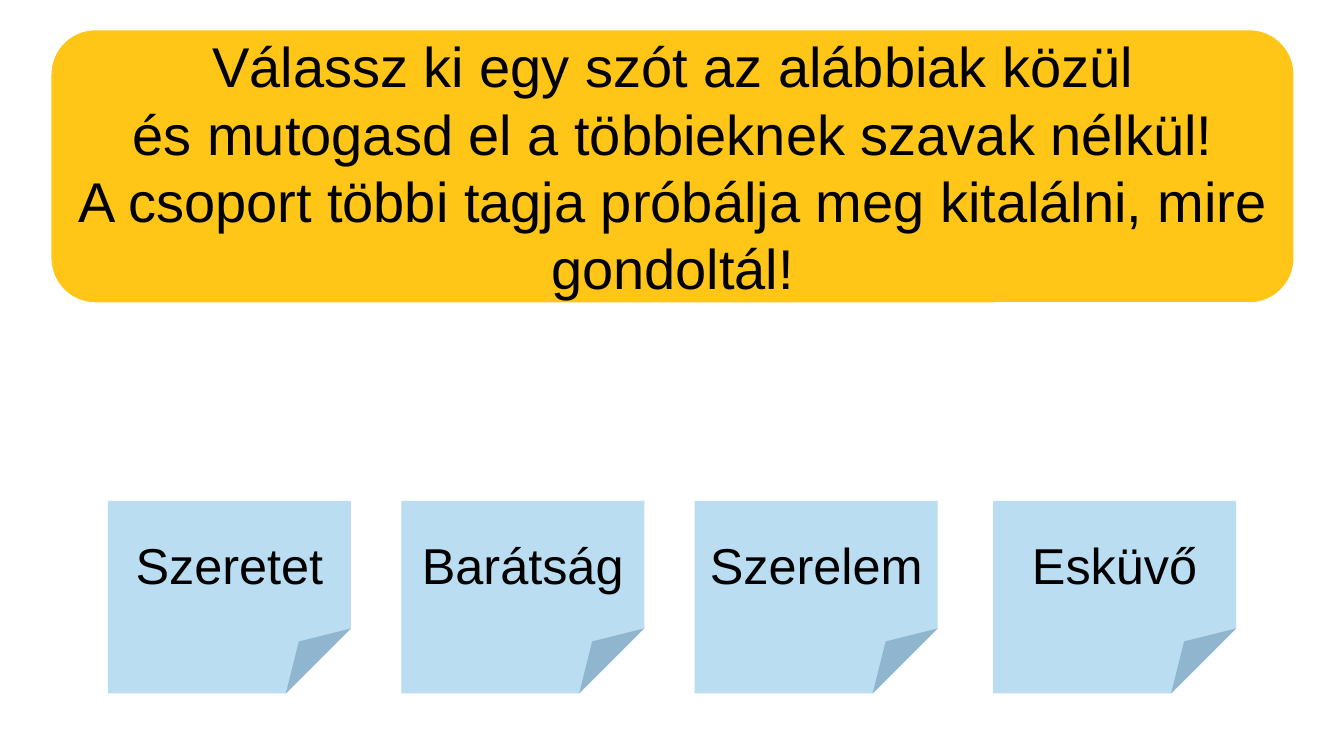
from dataclasses import dataclass
from lxml.etree import SubElement
from pptx import Presentation
from pptx.dml.color import RGBColor
from pptx.enum.shapes import MSO_SHAPE
from pptx.enum.text import MSO_ANCHOR, PP_ALIGN
from pptx.oxml.ns import qn
from pptx.util import Inches, Pt


@dataclass(frozen=True)
class Theme:
    gold: str = "FFC000"
    blue: str = "95CAEA"
    white: str = "FFFFFF"
    ink: str = "000000"
    face: str = "Arial"
    task: int = 40
    word: int = 36
    edge: int = 3


THEME = Theme()
TASK = [
    "Válassz ki egy szót az alábbiak közül\n"
    "és mutogasd el a többieknek szavak nélkül!",
    "A csoport többi tagja próbálja meg kitalálni, mire gondoltál!",
]
NOTES = {"Szeretet": 1.07, "Barátság": 3.98, "Szerelem": 6.89, "Esküvő": 9.85}


def style(item, values):
    for name, value in values.items():
        setattr(item, name, value)


def tint(shape, color, alpha):
    shape.fill.solid()
    shape.fill.fore_color.rgb = RGBColor.from_string(color)
    node = next(shape._element.spPr.iter(qn("a:srgbClr")))
    SubElement(node, qn("a:alpha"), val=str(alpha * 1000))


def write(shape, lines, size):
    frame = shape.text_frame
    style(frame, {"word_wrap": True, "vertical_anchor": MSO_ANCHOR.MIDDLE})
    for index, line in enumerate(lines):
        para = frame.add_paragraph() if index else frame.paragraphs[0]
        style(para, {"text": line, "alignment": PP_ALIGN.CENTER})
        for run in para.runs:
            style(run.font, {"name": THEME.face, "size": Pt(size)})
            run.font.color.rgb = RGBColor.from_string(THEME.ink)


def add_card(slide, kind, box, color, alpha, lines, size):
    shape = slide.shapes.add_shape(kind, *map(Inches, box))
    shape.shadow.inherit = False
    shape.line.fill.background()
    tint(shape, color, alpha)
    write(shape, lines, size)
    return shape


def add_task(slide):
    card = add_card(slide, MSO_SHAPE.ROUNDED_RECTANGLE, (0.49, 0.28, 12.36, 2.74),
                    THEME.gold, 91, TASK, THEME.task)
    card.line.color.rgb = RGBColor.from_string(THEME.white)
    card.line.width = Pt(THEME.edge)


def add_note(slide, word, left):
    note = add_card(slide, MSO_SHAPE.FOLDED_CORNER, (left, 4.97, 2.41, 1.91),
                    THEME.blue, 64, [word], THEME.word)
    guides = next(note._element.spPr.iter(qn("a:avLst")))
    SubElement(guides, qn("a:gd"), name="adj", fmla="val 33800")


def main():
    deck = Presentation()
    style(deck, {"slide_width": Inches(13.33), "slide_height": Inches(7.5)})
    slide = deck.slides.add_slide(deck.slide_layouts[6])
    add_task(slide)
    for word, left in NOTES.items():
        add_note(slide, word, left)
    deck.save("out.pptx")


if __name__ == "__main__":
    main()
